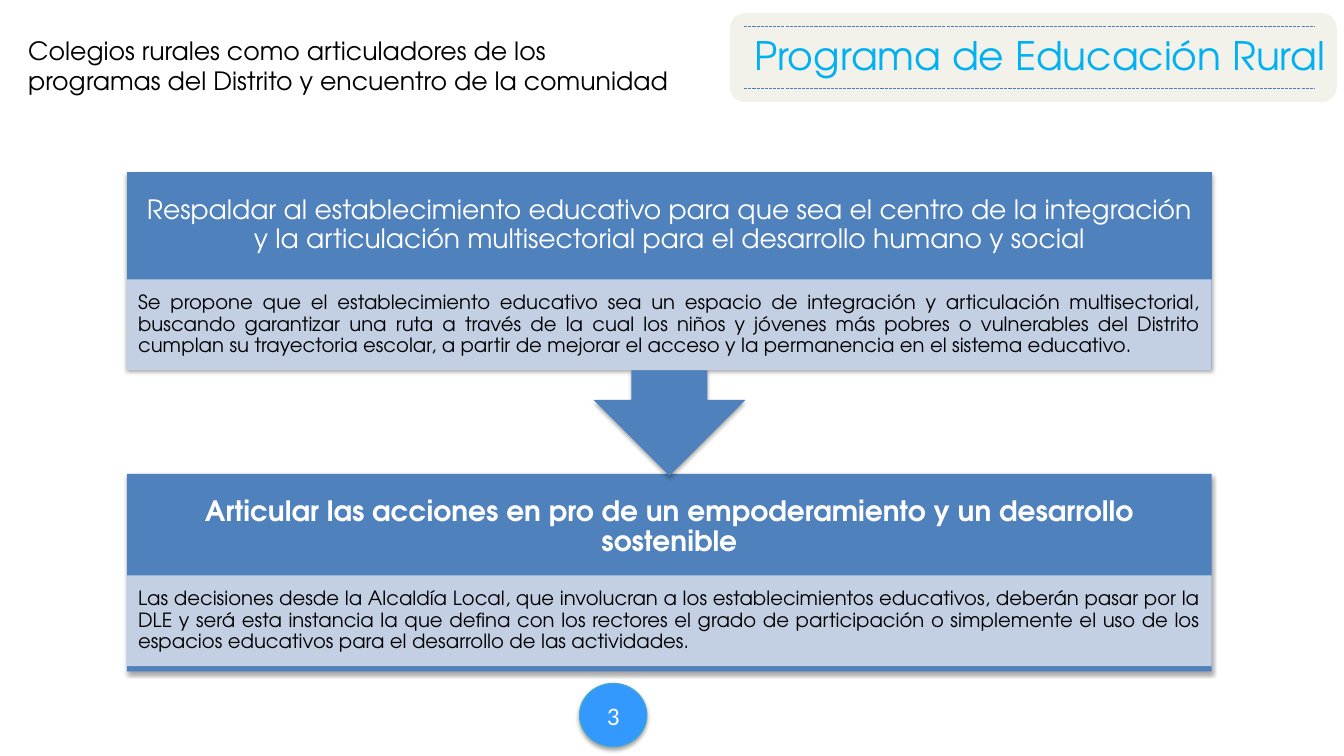
import pptx
import pptx.util
import pptx.dml.color
import pptx.enum.shapes
import pptx.enum.text
import pptx.oxml
import pptx.oxml.ns

Cm, Pt = pptx.util.Cm, pptx.util.Pt
SHAPE = pptx.enum.shapes.MSO_SHAPE
ALIGN = pptx.enum.text.PP_ALIGN
ANCHOR = pptx.enum.text.MSO_ANCHOR
FONT = "TeX Gyre Adventor"
NS = pptx.oxml.ns.nsdecls("a")


def paint(fill, color, alpha=100):
    """Fill with a solid colour; alpha is the opacity in percent."""
    fill.solid()
    fill.fore_color.rgb = pptx.dml.color.RGBColor.from_string(color)
    if alpha < 100:
        tint = fill._xPr.find(".//" + pptx.oxml.ns.qn("a:srgbClr"))
        tint.append(pptx.oxml.parse_xml(f'<a:alpha {NS} val="{alpha * 1000}"/>'))


def write(shape, text, size, color, align=ALIGN.LEFT, font=FONT,
          anchor=ANCHOR.TOP, pad=(0.25, 0.13)):
    """Put one paragraph in a shape; pad is the side and the top inset in cm."""
    frame = shape.text_frame
    frame.word_wrap = True
    frame.auto_size = pptx.enum.text.MSO_AUTO_SIZE.NONE
    frame.vertical_anchor = anchor
    frame.margin_left = frame.margin_right = Cm(pad[0])
    frame.margin_top = frame.margin_bottom = Cm(pad[1])
    frame.text = text
    line = frame.paragraphs[0]
    line.alignment = align
    line.font.size = Pt(size)
    line.font.name = font
    paint(line.font.fill, color)
    return line


deck = pptx.Presentation()
deck.slide_width, deck.slide_height = Cm(33.86), Cm(19.05)
slide = deck.slides.add_slide(deck.slide_layouts[5])
shapes = slide.shapes

# Title
title = shapes.title
title.left, title.top, title.width, title.height = Cm(0.46), Cm(0.76), Cm(16.94), Cm(1.8)
write(title, "Colegios rurales como articuladores de los programas del Distrito "
      "y encuentro de la comunidad", 18, "000000")

# Steps, lower one first so that the arrow lies over it
left, width = Cm(3.2), Cm(27.33)
steps = [
    (SHAPE.RECTANGLE, 11.94, 4.98, 14.5, 20, True, 0,
     "Articular las acciones en pro de un empoderamiento y un desarrollo sostenible",
     "Las decisiones desde la Alcaldía Local, que involucran a los establecimientos "
     "educativos, deberán pasar por la DLE y será esta instancia la que defina con los "
     "rectores el grado de participación o simplemente el uso de los espacios educativos "
     "para el desarrollo de las actividades."),
    (SHAPE.UP_ARROW_CALLOUT, 4.34, 7.65, 7.04, 19, False, 180,
     "Respaldar al establecimiento educativo para que sea el centro de la integración y "
     "la articulación multisectorial para el desarrollo humano y social",
     "Se propone que el establecimiento educativo sea un espacio de integración y "
     "articulación multisectorial, buscando garantizar una ruta a través de la cual los "
     "niños y jóvenes más pobres o vulnerables del Distrito cumplan su trayectoria "
     "escolar, a partir de mejorar el acceso y la permanencia en el sistema educativo."),
]
raised = []
for kind, top, height, split, size, bold, turn, head, detail in steps:
    block = shapes.add_shape(kind, left, Cm(top), width, Cm(height))
    block.rotation = turn
    paint(block.fill, "4F81BD")
    block.line.fill.background()
    raised.append(block)

    label = shapes.add_textbox(left, Cm(top), width, Cm(2.69))
    line = write(label, head, size, "FFFFFF", ALIGN.CENTER,
                 anchor=ANCHOR.MIDDLE, pad=(0.4, 0.4))
    line.line_spacing = 0.9
    line.font.bold = bold

    band = shapes.add_shape(SHAPE.RECTANGLE, left, Cm(split), width, Cm(2.29))
    band.shadow.inherit = False
    paint(band.fill, "D0D8E8", 90)
    band.line.fill.background()
    line = write(band, detail, 14, "000000", ALIGN.JUSTIFY,
                 anchor=ANCHOR.MIDDLE, pad=(0.28, 0.05))
    line.line_spacing = 0.9

# Programme banner
panel = shapes.add_shape(SHAPE.ROUNDED_RECTANGLE, Cm(18.39), Cm(0.33), Cm(15.29), Cm(2.24))
panel.shadow.inherit = False
paint(panel.fill, "EEECE1", 68)
panel.line.fill.background()
banner = shapes.add_textbox(Cm(18.75), Cm(0.66), Cm(15.1), Cm(1.45))
write(banner, "Programa de Educación Rural", 28, "00B0F0")
for y in (0.66, 2.24):
    rule = shapes.add_connector(pptx.enum.shapes.MSO_CONNECTOR.STRAIGHT,
                                Cm(18.75), Cm(y), Cm(33.12), Cm(y))
    paint(rule.line.fill, "4B7EBC")
    rule.line.width = Pt(0.75)
    rule.line.dash_style = pptx.enum.dml.MSO_LINE.SQUARE_DOT
    rule._element.spPr.append(pptx.oxml.parse_xml(f"<a:effectLst {NS}/>"))

# Page number
badge = shapes.add_shape(SHAPE.OVAL, Cm(14.6), Cm(17.22), Cm(1.7), Cm(1.6))
paint(badge.fill, "3399FF")
paint(badge.line.fill, "46AAC5")
badge.line.width = Pt(0.75)
write(badge, "3", 18, "FFFFFF", ALIGN.CENTER, "Calibri", ANCHOR.MIDDLE)
raised.append(badge)

# Soft shadow straight below
for shape in raised:
    shape._element.spPr.append(pptx.oxml.parse_xml(
        f'<a:effectLst {NS}><a:outerShdw blurRad="{Pt(3.1)}" dist="{Pt(1.8)}" '
        'dir="5400000" rotWithShape="0"><a:srgbClr val="000000">'
        '<a:alpha val="35000"/></a:srgbClr></a:outerShdw></a:effectLst>'))

deck.save("out.pptx")
